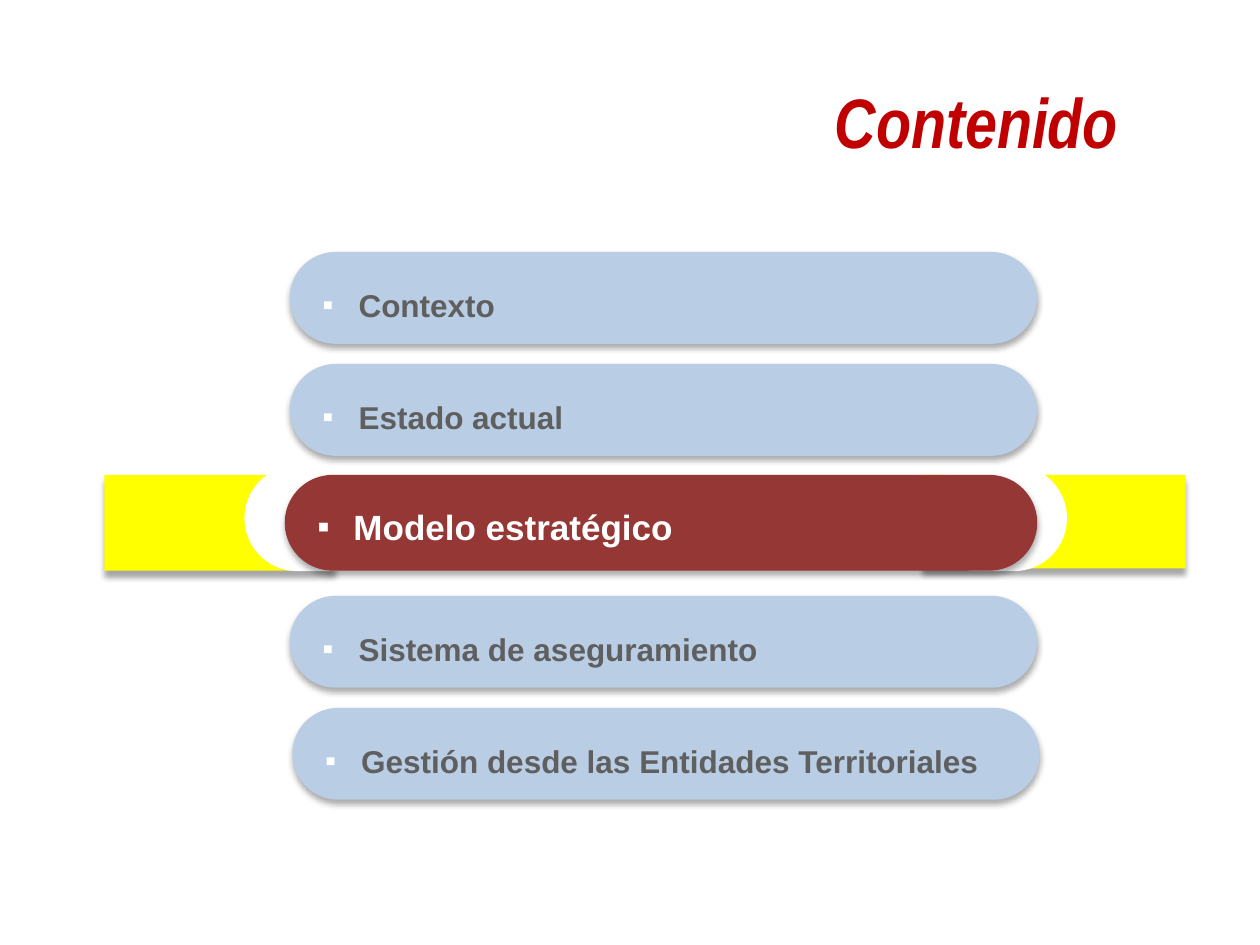
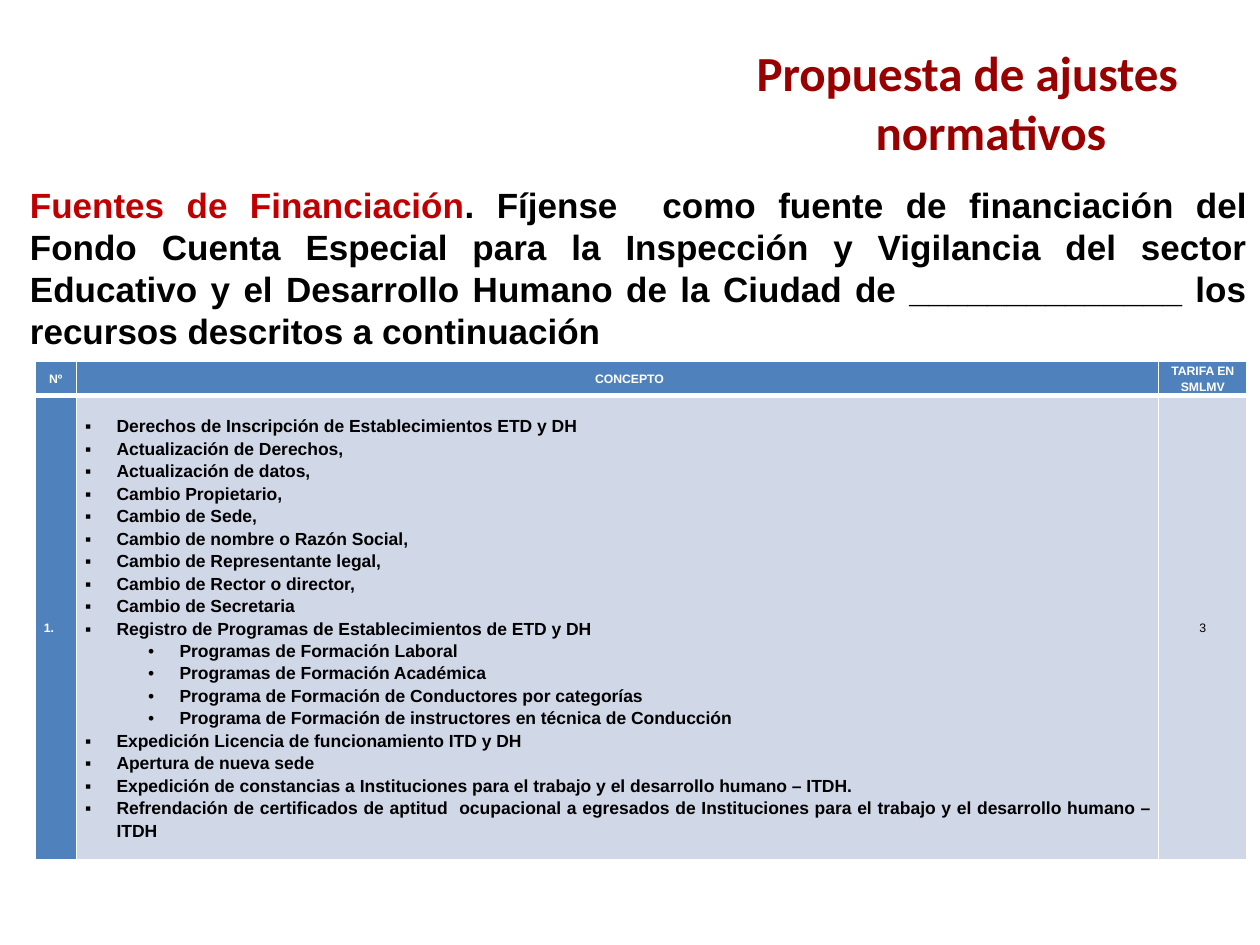
"""Build the contents slide and the funding-sources slide."""
from collections import namedtuple

from lxml import etree
from pptx import Presentation
from pptx import util as u
from pptx.dml.color import RGBColor
from pptx.enum import shapes, text
from pptx.oxml import ns

Box = namedtuple("Box", "left top width height")

WHITE = RGBColor(0xFF, 0xFF, 0xFF)
BLACK = RGBColor(0x00, 0x00, 0x00)
RED = RGBColor(0xC0, 0x00, 0x00)
DARK_RED = RGBColor(0x99, 0x00, 0x00)
MAROON = RGBColor(0x95, 0x37, 0x35)
YELLOW = RGBColor(0xFF, 0xFF, 0x00)
PALE_BLUE = RGBColor(0xB9, 0xCD, 0xE5)
GREY = RGBColor(0x5F, 0x5F, 0x5F)
HEADER_BLUE = RGBColor(0x4F, 0x81, 0xBD)
BODY_BLUE = RGBColor(0xD0, 0xD8, 0xE8)

LEFT, CENTER, JUSTIFY = (text.PP_ALIGN.LEFT, text.PP_ALIGN.CENTER,
                         text.PP_ALIGN.JUSTIFY)
MIDDLE = text.MSO_ANCHOR.MIDDLE
RECT = shapes.MSO_SHAPE.RECTANGLE
ROUND = shapes.MSO_SHAPE.ROUNDED_RECTANGLE

ARIAL = {"name": "Arial", "bold": True}
TITLE = {"name": "Arial Narrow", "size": u.Pt(40), "bold": True, "italic": True}
SECTION_TITLE = {"name": "Calibri", "size": u.Pt(28), "bold": True}
TOPIC = {**ARIAL, "size": u.Pt(18)}
CURRENT_TOPIC = {**ARIAL, "size": u.Pt(20)}
INTRO = {**ARIAL, "size": u.Pt(20)}
TABLE_SMALL = {**ARIAL, "size": u.Pt(7)}
TABLE_LIST = {**ARIAL, "size": u.Pt(10)}
TARIFF = {**TABLE_SMALL, "bold": False}

TOPICS = ["Contexto", "Estado actual", "Modelo estratégico",
          "Sistema de aseguramiento",
          "Gestión desde las Entidades Territoriales"]
CURRENT = 2

FUNDING = [
    ("Fuentes de Financiación", RED),
    (". Fíjense  como fuente de financiación del Fondo Cuenta Especial para la "
     "Inspección y Vigilancia del sector Educativo y el Desarrollo Humano de la "
     "Ciudad de ______________ los recursos descritos a continuación", BLACK)]

HEADERS = ["Nº", "CONCEPTO", "TARIFA EN SMLMV"]
CONCEPTS = [
    (0, "Derechos de Inscripción de Establecimientos ETD y DH"),
    (0, "Actualización de Derechos,"),
    (0, "Actualización de datos,"),
    (0, "Cambio Propietario,"),
    (0, "Cambio de Sede,"),
    (0, "Cambio de nombre o Razón Social,"),
    (0, "Cambio de Representante legal,"),
    (0, "Cambio de Rector o director,"),
    (0, "Cambio de Secretaria"),
    (0, "Registro de Programas de Establecimientos de ETD y DH"),
    (1, "Programas de Formación Laboral"),
    (1, "Programas de Formación Académica"),
    (1, "Programa de Formación de Conductores por categorías"),
    (1, "Programa de Formación de instructores en técnica de Conducción"),
    (0, "Expedición Licencia de funcionamiento ITD y DH"),
    (0, "Apertura de nueva sede"),
    (0, "Expedición de constancias a Instituciones para el trabajo y el "
        "desarrollo humano – ITDH."),
    (0, "Refrendación de certificados de aptitud  ocupacional a egresados de "
        "Instituciones para el trabajo y el desarrollo humano – ITDH")]


def points(box):
    """Turn a box of numbers into lengths."""
    return [u.Pt(value) for value in box]


def apply(target, values):
    """Set each attribute named in the dict."""
    for name, value in values.items():
        setattr(target, name, value)


def add_xml(parent, tag, **attributes):
    """Append a drawing element and return it."""
    return etree.SubElement(parent, ns.qn(tag), attributes)


def indent(para, margin, first):
    """Give a paragraph a left margin and a first-line indent."""
    props = para._p.get_or_add_pPr()
    props.set("marL", str(u.Pt(margin)))
    props.set("indent", str(u.Pt(first)))
    return props


def add_bullet(para, mark, margin, hanging, color):
    """Give a paragraph a hanging bullet."""
    props = indent(para, margin, -hanging)
    add_xml(add_xml(props, "a:buClr"), "a:srgbClr", val=str(color))
    add_xml(props, "a:buFont", typeface="Arial")
    add_xml(props, "a:buChar", char=mark)


def add_span(para, words, font, color):
    """Add one formatted run."""
    span = para.add_run()
    span.text = words
    apply(span.font, font)
    span.font.color.rgb = color


def add_text(page, box, spans, font, align=LEFT, **frame_format):
    """Add a wrapped one-paragraph text box and return its paragraph."""
    frame = page.shapes.add_textbox(*points(box)).text_frame
    apply(frame, {"word_wrap": True, **frame_format})
    para = frame.paragraphs[0]
    para.alignment = align
    for words, color in spans:
        add_span(para, words, font, color)
    return para


def add_block(page, kind, box, fill, shadow=None):
    """Add a borderless shape; shadow is opacity in percent and distance."""
    block = page.shapes.add_shape(kind, *points(box))
    block.shadow.inherit = False
    block.fill.solid()
    block.fill.fore_color.rgb = fill
    block.line.fill.background()
    if kind == ROUND:
        block.adjustments[0] = 0.5
    if shadow:
        opacity, distance = shadow
        effects = block._element.spPr.find(ns.qn("a:effectLst"))
        outer = add_xml(effects, "a:outerShdw", blurRad=str(u.Pt(3.5)),
                        dist=str(u.Pt(distance)), dir="5400000",
                        algn="ctr", rotWithShape="0")
        color = add_xml(outer, "a:srgbClr", val=str(BLACK))
        add_xml(color, "a:alpha", val=str(opacity * 1000))


def add_topic(page, box, words, fill, color, font):
    """Add a pill with its bulleted topic."""
    add_block(page, ROUND, box, fill, (32, 2.2))
    drop = 2.2 if font is CURRENT_TOPIC else 3.8
    label = Box(box.left + 18.7, box.top + drop, box.width - 18.7, box.height)
    no_margins = dict.fromkeys(
        ["margin_left", "margin_right", "margin_top", "margin_bottom"], 0)
    para = add_text(page, label, [(words, color)], font,
                    vertical_anchor=MIDDLE, **no_margins)
    add_bullet(para, "▪", 20.6, 20.6, WHITE)


def add_current_topic(page, box, words):
    """Add the highlighted pill over its yellow band with white cut-outs."""
    left, top, width, height = box
    wings = [
        (Box(left + 364.3, top, 150.5, 53.4), Box(left + 365, top - 5.5, 82, 60.5)),
        (Box(left - 103, top, 131.8, height), Box(left - 23, top - 5.5, 87, 60.5))]
    for band, cutout in wings:
        add_block(page, RECT, band, YELLOW, (34, 4))
        add_block(page, ROUND, cutout, WHITE)
    add_topic(page, box, words, MAROON, WHITE, CURRENT_TOPIC)


def add_topics(page, box):
    """Stack the topics in a box, with the current one standing out."""
    pitch = 64
    for index, words in enumerate(TOPICS):
        top = box.top + index * pitch
        if index == CURRENT:
            add_current_topic(
                page, Box(box.left - 2.9, top - 0.6, box.width + 3, 54.7), words)
            continue
        top += 4.5 if index > CURRENT else 0
        shift = 1.5 if index == len(TOPICS) - 1 else 0
        add_topic(page, Box(box.left + shift, top, box.width, 52.5),
                  words, PALE_BLUE, GREY, TOPIC)


def style_cell(cell, fill, top, bottom):
    """Give a cell its margins, white borders and fill."""
    apply(cell, {"margin_left": u.Pt(5), "margin_right": u.Pt(5),
                 "margin_top": 0, "margin_bottom": 0,
                 "vertical_anchor": MIDDLE})
    props = cell._tc.get_or_add_tcPr()
    for side, width in zip("LRTB", (1, 1, top, bottom)):
        border = add_xml(props, f"a:ln{side}", w=str(u.Pt(width)))
        add_xml(add_xml(border, "a:solidFill"), "a:srgbClr", val=str(WHITE))
    cell.fill.solid()
    cell.fill.fore_color.rgb = fill


def write_cell(cell, words, font, color, align=CENTER):
    """Write a one-paragraph cell and return the paragraph."""
    para = cell.text_frame.paragraphs[0]
    apply(para, {"alignment": align, "line_spacing": 1.15,
                 "space_after": u.Pt(10)})
    add_span(para, words, font, color)
    return para


def write_concepts(cell):
    """Write the two-level list of concepts."""
    frame = cell.text_frame
    for index, (level, words) in enumerate(CONCEPTS):
        para = frame.add_paragraph() if index else frame.paragraphs[0]
        add_bullet(para, "▪•"[level], 18 + 36 * level, 18, BLACK)
        apply(para, {"level": level, "alignment": JUSTIFY,
                     "line_spacing": 1.15})
        add_span(para, words, TABLE_LIST, BLACK)
    para.space_after = u.Pt(10)


def add_tariff_table(page, box):
    """Add the table of concepts and tariffs."""
    table = page.shapes.add_table(2, 3, *points(box)).table
    apply(table, {"first_row": False, "horz_banding": False})
    number_width, tariff_width, header_height = 23.6, 50.4, 19
    widths = (number_width, box.width - number_width - tariff_width, tariff_width)
    for column, width in zip(table.columns, widths):
        column.width = u.Pt(width)
    for row, height in zip(table.rows, (header_height, box.height - header_height)):
        row.height = u.Pt(height)
    for column, words in enumerate(HEADERS):
        style_cell(table.cell(0, column), HEADER_BLUE, 1, 3)
        para = write_cell(table.cell(0, column), words, TABLE_SMALL, WHITE)
        if column == 1:
            indent(para, 35.3, -21.6)
    number, concepts, tariff = (table.cell(1, column) for column in range(3))
    for cell, fill in ((number, HEADER_BLUE), (concepts, BODY_BLUE),
                       (tariff, BODY_BLUE)):
        style_cell(cell, fill, 3, 1)
    write_cell(number, "1.", TABLE_SMALL, WHITE, LEFT)
    write_concepts(concepts)
    write_cell(tariff, "3", TARIFF, BLACK)


def build_contents(page):
    """Lay out the contents slide."""
    add_text(page, Box(397.5, 49, 321, 39.6), [("Contenido", RED)], TITLE,
             CENTER, vertical_anchor=MIDDLE)
    add_topics(page, Box(165.6, 144, 427, 315))


def build_funding(page):
    """Lay out the funding-sources slide."""
    title = add_text(page, Box(405.4, 20.9, 294.5, 51),
                     [("Propuesta de ajustes normativos", DARK_RED)],
                     SECTION_TITLE, CENTER)
    indent(title, 27, -27)
    add_text(page, Box(10, 101.5, 710, 128), FUNDING, INTRO, JUSTIFY)
    add_tariff_table(page, Box(20, 206.6, 692.5, 284.4))


def main():
    """Build and save the deck."""
    deck = Presentation()
    apply(deck, {"slide_width": u.Pt(720), "slide_height": u.Pt(540)})
    for build in (build_contents, build_funding):
        build(deck.slides.add_slide(deck.slide_layouts[6]))
    deck.save("out.pptx")


if __name__ == "__main__":
    main()
